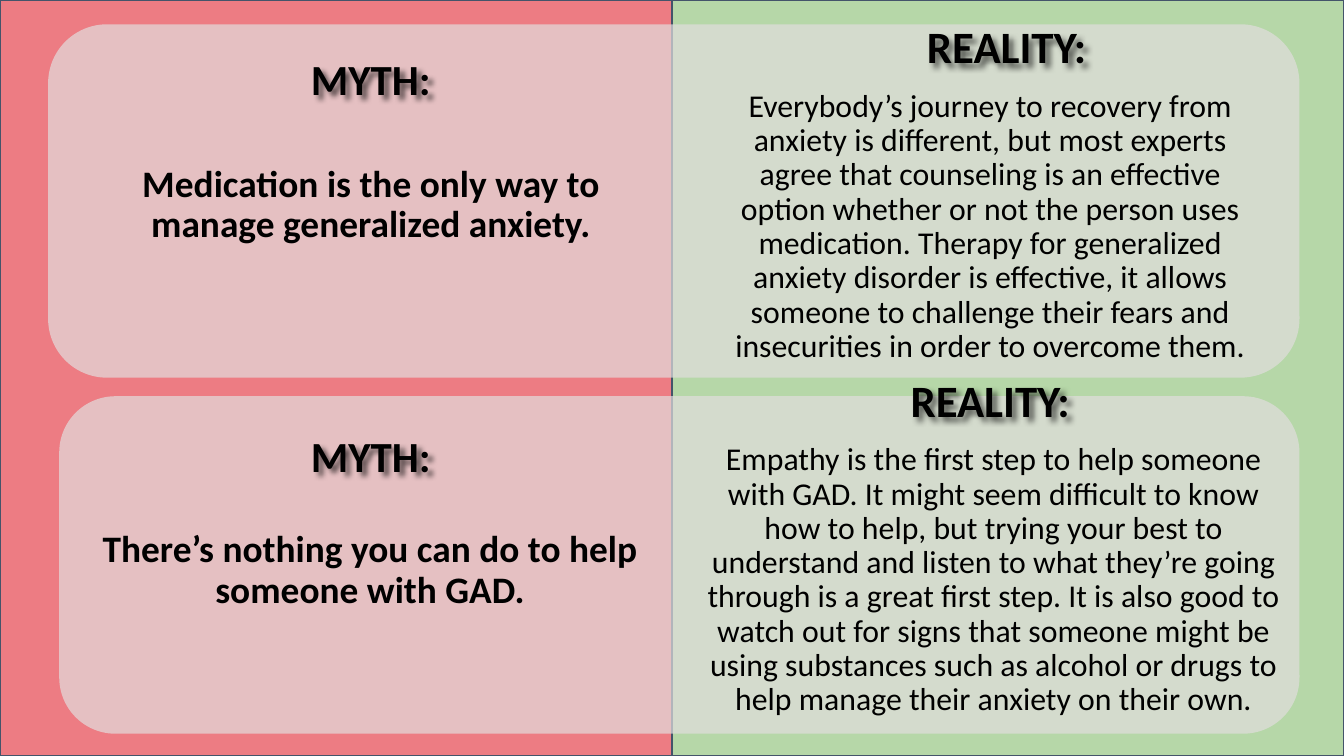
from dataclasses import dataclass

from lxml import etree
from pptx import Presentation
from pptx.dml.color import RGBColor as Rgb
from pptx.enum import shapes, text
from pptx.oxml import ns
from pptx.util import Cm, Pt


@dataclass(frozen=True)
class Theme:
    font: str = "Calibri"
    ink: str = "000000"
    myth: str = "ED7C83"
    real: str = "B6D7A8"
    edge: str = "44546A"
    panel: str = "E2DEDE"
    real_head: int = 24
    myth_head: int = 23
    claim: int = 20
    reply: int = 17


look = Theme()


def write(box, words, place, size, bold=False, space=0.9, inset=0.1, indent=0):
    box.left, box.top, box.width, box.height = map(Cm, place)
    frame = box.text_frame
    frame.word_wrap = True
    frame.auto_size = text.MSO_AUTO_SIZE.NONE
    frame.vertical_anchor = text.MSO_ANCHOR.TOP
    frame.margin_left = frame.margin_right = Cm(0.18)
    frame.margin_top, frame.margin_bottom = Cm(inset), Cm(0.1)
    frame.text = words
    para = frame.paragraphs[0]
    props = para._p.get_or_add_pPr()
    props.set("marL", str(Cm(indent)))
    props.set("indent", "0")
    etree.SubElement(props, ns.qn("a:buNone"))
    para.alignment = text.PP_ALIGN.CENTER
    para.line_spacing = space
    para.space_before = Pt(0)
    font = para.runs[0].font
    font.name, font.size, font.bold = look.font, Pt(size), bold
    font.color.rgb = Rgb.from_string(look.ink)


def block(kind, place, fill):
    shape = slide.shapes.add_shape(kind, *map(Cm, place))
    shape.shadow.inherit = False
    shape.fill.solid()
    shape.fill.fore_color.rgb = Rgb.from_string(fill)
    return shape


deck = Presentation()
deck.slide_width, deck.slide_height = Cm(25.4), Cm(14.29)
slide = deck.slides.add_slide(deck.slide_layouts.get_by_name("Comparison"))
title = slide.shapes.title.element
title.getparent().remove(title)

for left, fill in ((12.7, look.real), (0, look.myth)):
    half = block(shapes.MSO_SHAPE.RECTANGLE, (left, 0, 12.7, 14.29), fill)
    half.line.color.rgb = Rgb.from_string(look.edge)
    half.line.width = Pt(0.75)

for place in ((0.91, 0.46, 23.65, 6.68), (1.12, 7.49, 23.44, 6.38)):
    panel = block(shapes.MSO_SHAPE.ROUNDED_RECTANGLE, place, look.panel)
    panel.line.fill.background()
    tint = panel.element.spPr.find(".//" + ns.qn("a:srgbClr"))
    etree.SubElement(tint, ns.qn("a:alpha"), val="70000")

claim = dict(size=look.claim, bold=True)
reply = dict(size=look.reply, inset=1.24)
bodies = (
    ("Medication is the only way to manage generalized anxiety.",
     (1.93, 2.16, 10.16, 3.28), dict(claim, inset=0.96)),
    ("Everybody’s journey to recovery from anxiety is different, but most "
     "experts agree that counseling is an effective option whether or not the "
     "person uses medication. Therapy for generalized anxiety disorder is "
     "effective, it allows someone to challenge their fears and insecurities "
     "in order to overcome them.",
     (13, 0.46, 10.95, 5.66), dict(reply, indent=0.48)),
    ("There’s nothing you can do to help someone with GAD.",
     (1.52, 8.2, 10.95, 3.89), dict(claim, inset=1.83)),
    ("Empathy is the first step to help someone with GAD. It might seem "
     "difficult to know how to help, but trying your best to understand and "
     "listen to what they’re going through is a great first step. It is also "
     "good to watch out for signs that someone might be using substances such "
     "as alcohol or drugs to help manage their anxiety on their own.",
     (13, 7.14, 11.56, 6.02), reply),
)
for body, (words, place, style) in zip(list(slide.placeholders), bodies):
    body.element.getparent().append(body.element)
    write(body, words, place, **style)

real = dict(size=look.real_head, indent=0.48)
myth = dict(size=look.myth_head)
heads = (
    ("REALITY:", (13.31, 0.46, 10.95, 1.55), real),
    ("REALITY:", (13, 7.14, 10.95, 1.55), real),
    ("MYTH:", (1.93, 1.09, 10.16, 1.3), myth),
    ("MYTH:", (1.93, 8.2, 10.16, 1.3), myth),
)
for words, place, style in heads:
    head = slide.shapes.add_textbox(*map(Cm, place))
    write(head, words, place, bold=True, space=0.8, **style)
    glow = etree.SubElement(head.element.spPr, ns.qn("a:effectLst"))
    cast = etree.SubElement(glow, ns.qn("a:outerShdw"), blurRad=str(Pt(3)),
                            dist=str(Pt(3)), dir="2700000", algn="tl")
    shade = etree.SubElement(cast, ns.qn("a:srgbClr"), val=look.ink)
    etree.SubElement(shade, ns.qn("a:alpha"), val="60000")

deck.save("out.pptx")
